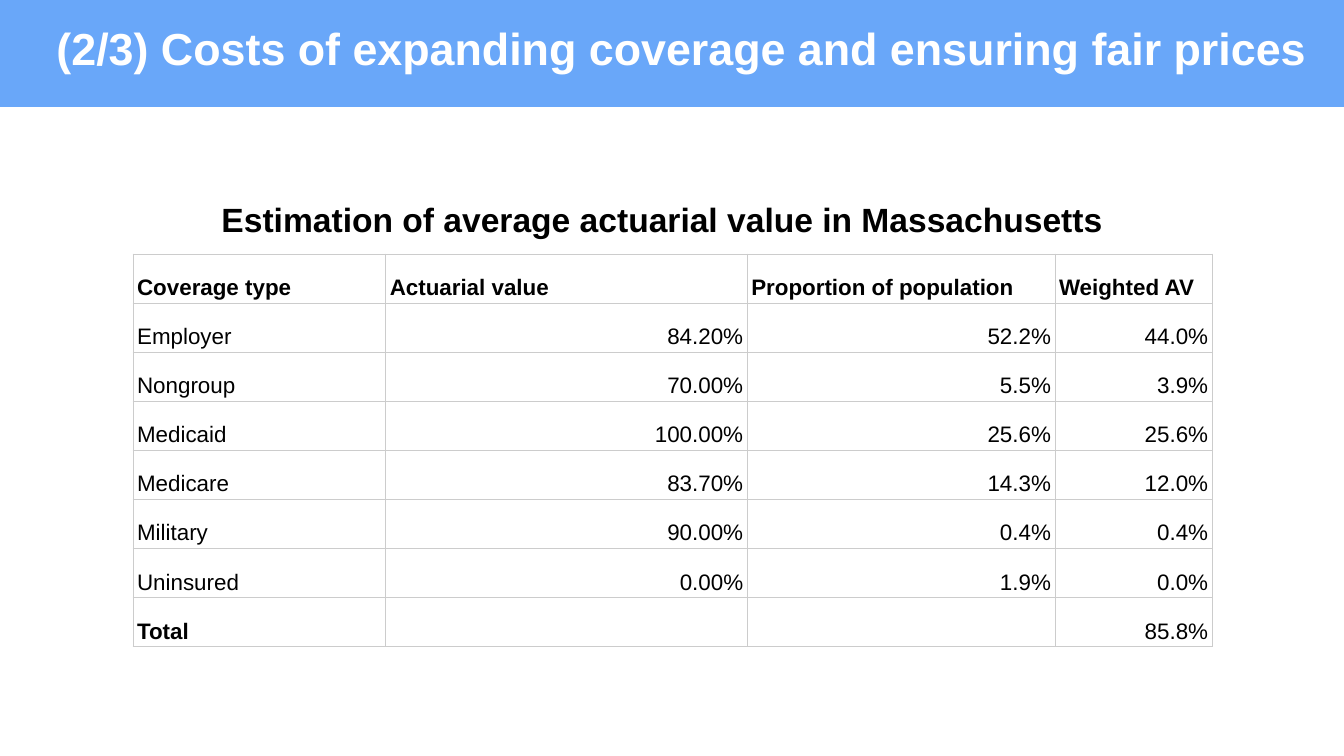
from lxml.etree import SubElement
from pptx import Presentation
from pptx.dml.color import RGBColor
from pptx.enum.shapes import MSO_SHAPE
from pptx.enum.text import MSO_ANCHOR, PP_ALIGN
from pptx.oxml.ns import qn
from pptx.util import Inches, Pt

COLORS = {"band": "69A7F9", "title": "FFFFFF", "text": "000000", "border": "CCCCCC"}
FONT = "Arial"
COLUMN_WIDTHS = [1.88, 2.69, 2.29, 1.17]
ROWS = [
    ("Coverage type", "Actuarial value", "Proportion of population", "Weighted AV"),
    ("Employer", "84.20%", "52.2%", "44.0%"),
    ("Nongroup", "70.00%", "5.5%", "3.9%"),
    ("Medicaid", "100.00%", "25.6%", "25.6%"),
    ("Medicare", "83.70%", "14.3%", "12.0%"),
    ("Military", "90.00%", "0.4%", "0.4%"),
    ("Uninsured", "0.00%", "1.9%", "0.0%"),
    ("Total", "", "", "85.8%"),
]


def style_font(para, size, color, bold=False):
    """Set the font of a whole paragraph."""
    font = para.font
    font.name, font.size, font.bold = FONT, Pt(size), bold
    font.color.rgb = RGBColor.from_string(COLORS[color])


def set_margins(target, side, end):
    """Set the side and top/bottom margins of a text frame or cell."""
    target.margin_left = target.margin_right = Inches(side)
    target.margin_top = target.margin_bottom = Inches(end)


def set_borders(cell):
    """Draw a thin line on all four sides of a cell."""
    props = cell._tc.get_or_add_tcPr()
    for position, side in enumerate(("a:lnL", "a:lnR", "a:lnT", "a:lnB")):
        line = SubElement(props, qn(side), w=str(Pt(0.47)))
        fill = SubElement(line, qn("a:solidFill"))
        SubElement(fill, qn("a:srgbClr"), val=COLORS["border"])
        props.insert(position, line)


def add_header(page, left, top, width, height):
    """Place the coloured band and the slide title over it."""
    band = page.shapes.add_shape(
        MSO_SHAPE.RECTANGLE, Inches(left), Inches(top), Inches(width), Inches(height))
    band.shadow.inherit = False
    band.fill.solid()
    band.fill.fore_color.rgb = RGBColor.from_string(COLORS["band"])
    band.line.color.rgb = RGBColor.from_string(COLORS["band"])
    band.line.width = Pt(0.75)

    title = page.shapes.title
    band._element.addnext(title._element)
    title.left, title.top = Inches(left - 0.17), Inches(top + 0.13)
    title.width, title.height = Inches(width + 0.37), Inches(height + 0.08)
    frame = title.text_frame
    frame.text = "(2/3) Costs of expanding coverage and ensuring fair prices"
    frame.word_wrap = True
    frame.vertical_anchor = MSO_ANCHOR.TOP
    set_margins(frame, 0.1, 0.1)
    para = frame.paragraphs[0]
    para.alignment = PP_ALIGN.LEFT
    para.line_spacing, para.space_before, para.space_after = 0.8, Pt(0), Pt(12)
    para._p.get_or_add_pPr().set("marL", str(Inches(0.5)))
    style_font(para, 24, "title", bold=True)


def add_caption(page, left, top, width, height):
    """Place the heading above the table."""
    box = page.shapes.add_textbox(Inches(left), Inches(top), Inches(width), Inches(height))
    frame = box.text_frame
    frame.text = "Estimation of average actuarial value in Massachusetts"
    frame.word_wrap = True
    set_margins(frame, 0.1, 0.1)
    style_font(frame.paragraphs[0], 18, "text", bold=True)


def fill_cell(cell, text, bold, alignment):
    """Write and format one table cell."""
    cell.fill.background()
    set_borders(cell)
    set_margins(cell, 0.03, 0.02)
    cell.vertical_anchor = MSO_ANCHOR.BOTTOM
    cell.text = text
    para = cell.text_frame.paragraphs[0]
    para.alignment = alignment
    if text:
        para.line_spacing = 1.15
    style_font(para, 12, "text", bold)


def add_coverage_table(page, left, top, height):
    """Place the table of actuarial values by coverage type."""
    table = page.shapes.add_table(
        len(ROWS), len(COLUMN_WIDTHS), Inches(left), Inches(top),
        Inches(sum(COLUMN_WIDTHS)), Inches(height)).table
    table.first_row = table.horz_banding = False
    for column, width in zip(table.columns, COLUMN_WIDTHS):
        column.width = Inches(width)
    for row_index, values in enumerate(ROWS):
        for column_index, text in enumerate(values):
            is_header = row_index == 0
            is_label = column_index == 0
            bold = is_header or text == "Total"
            alignment = PP_ALIGN.LEFT if is_header or is_label else PP_ALIGN.RIGHT
            fill_cell(table.cell(row_index, column_index), text, bold, alignment)


def main():
    """Build the widescreen slide and save the deck."""
    deck = Presentation()
    deck.slide_width = Inches(10)
    deck.slide_height = deck.slide_width * 9 // 16
    page = deck.slides.add_slide(deck.slide_layouts[5])
    add_coverage_table(page, 0.99, 1.89, 2.92)
    add_caption(page, 1.55, 1.38, 6.9, 0.5)
    add_header(page, -0.01, 0, 10.01, 0.79)
    deck.save("out.pptx")


if __name__ == "__main__":
    main()
